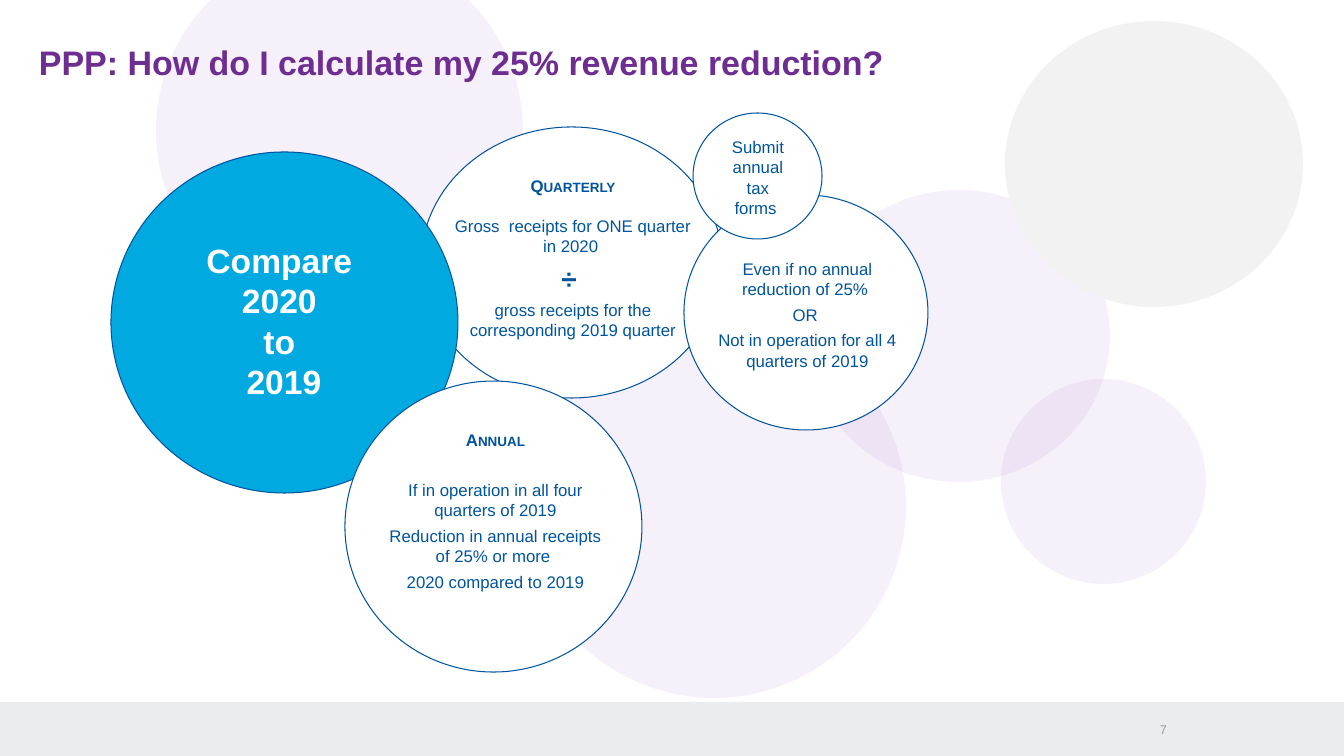
from lxml.etree import SubElement
from pptx import Presentation
from pptx.dml.color import RGBColor
from pptx.enum.shapes import MSO_SHAPE as Kind
from pptx.enum.text import MSO_ANCHOR as Anchor, PP_ALIGN as Align
from pptx.oxml.ns import qn
from pptx.util import Emu, Pt

PX = 9144000 / 1008  # 100.8 px to the inch
WHITE = RGBColor(0xFF, 0xFF, 0xFF)
BLUE = RGBColor(0x00, 0x54, 0x9F)
CYAN = RGBColor(0x00, 0xA9, 0xE0)
PURPLE = RGBColor(0x6E, 0x2D, 0x91)
LILAC = RGBColor(0xAE, 0x6C, 0xD2)
PALE = RGBColor(0xF2, 0xF2, 0xF2)
SILVER = RGBColor(0xEB, 0xEC, 0xED)
GRAY = RGBColor(0x9A, 0x9B, 0x9C)

deck = Presentation()
deck.slide_width, deck.slide_height = Emu(round(1344 * PX)), Emu(round(756 * PX))
slide = deck.slides.add_slide(deck.slide_layouts[6])


def draw(box, fill, kind=Kind.OVAL, line=None, alpha=None):
    shape = slide.shapes.add_shape(kind, *[Emu(round(n * PX)) for n in box])
    shape.shadow.inherit = False
    shape.fill.solid()
    shape.fill.fore_color.rgb = fill
    if alpha:
        color = shape.fill._xPr.find(".//" + qn("a:srgbClr"))
        SubElement(color, qn("a:alpha")).set("val", str(alpha * 1000))
    if line:
        shape.line.color.rgb = line
        shape.line.width = Pt(0.75)
    else:
        shape.line.fill.background()
    return shape


def write(box, paras, inset=True, anchor=Anchor.TOP, **base):
    """Each paragraph is a string, or a string with its own format."""
    label = slide.shapes.add_textbox(*[Emu(round(n * PX)) for n in box])
    frame = label.text_frame
    frame.word_wrap = True
    frame.vertical_anchor = anchor
    if not inset:
        frame.margin_left = frame.margin_right = 0
        frame.margin_top = frame.margin_bottom = 0
    for i, item in enumerate(paras):
        text, own = (item, {}) if isinstance(item, str) else item
        look = {"size": 12, "color": BLUE, "bold": False, "caps": False,
                "align": Align.CENTER, "after": 0, **base, **own}
        para = frame.paragraphs[0] if i == 0 else frame.add_paragraph()
        para.alignment = look["align"]
        para.space_after = Pt(look["after"])
        run = para.add_run()
        run.text = text
        run.font.name = "Arial"
        run.font.size = Pt(look["size"])
        run.font.bold = look["bold"]
        run.font.color.rgb = look["color"]
        if look["caps"]:
            run._r.get_or_add_rPr().set("cap", "small")
    return label


# Backdrop
draw((0, 702, 1344, 54), SILVER, Kind.RECTANGLE)
for box in [(156, -53, 367, 367), (522, 314, 384, 384),
            (807, 190, 303, 292), (1001, 379, 205, 205)]:
    draw(box, LILAC, alpha=10)
draw((1005, 21, 298, 286), PALE)

# Title and page number
write((39, 40, 1263, 43), ["PPP: How do I calculate my 25% revenue reduction?"],
      inset=False, anchor=Anchor.MIDDLE, size=24.3, color=PURPLE, bold=True,
      align=Align.LEFT)
write((1151, 721, 16, 16), ["7"], inset=False, anchor=Anchor.MIDDLE, size=9,
      color=GRAY, align=Align.RIGHT)

# Quarterly
draw((421, 127, 301, 271), WHITE, line=BLUE)
write((444, 171, 258, 198), [
    ("Quarterly", {"bold": True, "caps": True, "after": 13.8}),
    "Gross  receipts for ONE quarter in 2020 ",
    ("÷ ", {"size": 20, "bold": True}),
    "gross receipts for the corresponding 2019 quarter"], after=3.8)

# Compare
disc = draw((111, 152, 347, 341), CYAN, line=BLUE)
label = write((162, 235, 244, 173), ["Compare ", "2020 ", "to ", "2019"],
              size=24, color=WHITE, bold=True)
slide.shapes.add_group_shape([disc, label])

# Annual
draw((345, 381, 297, 291), WHITE, line=BLUE)
write((378, 425, 235, 202), [
    ("Annual", {"bold": True, "caps": True, "after": 21.4}),
    "If in operation in all four quarters of 2019",
    "Reduction in annual receipts of 25% or more ",
    "2020 compared to 2019"], after=3.8)

# No annual reduction
draw((684, 195, 244, 235), WHITE, line=BLUE)
write((703, 254, 209, 123), [
    "Even if no annual reduction of 25% ",
    "OR ",
    "Not in operation for all 4 quarters of 2019"], after=3.8)

# Tax forms
draw((693, 113, 129, 126), WHITE, line=BLUE)
write((718, 132, 80, 92), ["Submit annual tax forms "])

deck.save("out.pptx")
